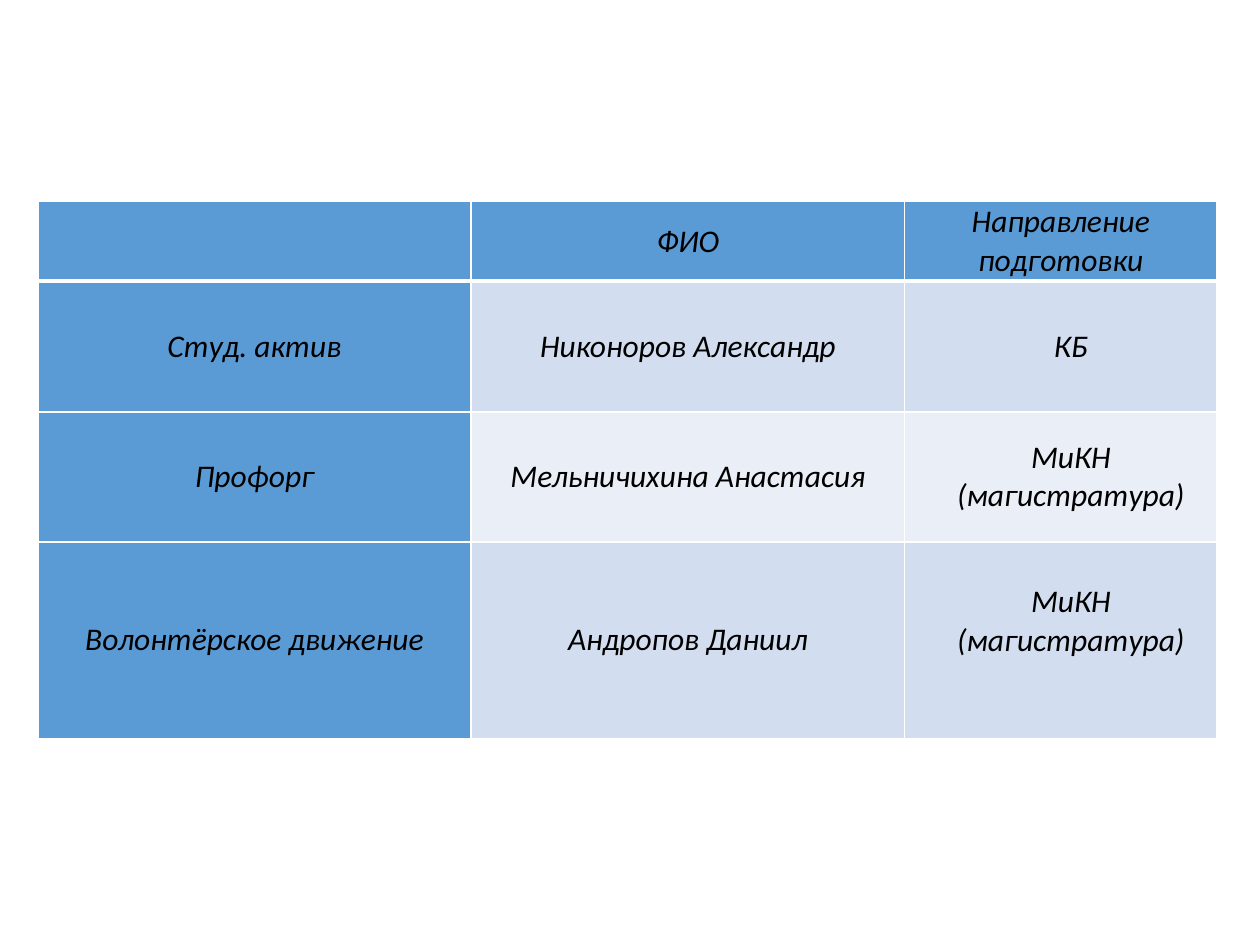
from lxml import etree
from pptx import Presentation
from pptx.dml.color import RGBColor
from pptx.enum.text import MSO_ANCHOR, PP_ALIGN
from pptx.oxml.ns import qn
from pptx.util import Inches, Pt

MIDDLE = MSO_ANCHOR.MIDDLE
CENTER = PP_ALIGN.CENTER

# Content
ROWS = [
    ("", "ФИО", "Направление подготовки"),
    ("Студ. актив", "Никоноров Александр", "КБ"),
    ("Профорг", "Мельничихина Анастасия", "МиКН (магистратура)"),
    ("Волонтёрское движение", "Андропов Даниил", "МиКН (магистратура)"),
]

# Format
COLORS = {"header": "5B9BD5", "odd": "D2DEEF", "even": "EAEFF7",
          "line": "FFFFFF", "text": "000000"}
LEFT, TOP = 0.3, 1.6
COLUMN_WIDTHS = [3.44, 3.44, 2.48]
ROW_HEIGHTS = [0.62, 1.04, 1.03, 1.56]
CELL_MARGIN = 0.01
LAST_CELL_BOTTOM = 0.31
DIRECTION_INDENT = 0.16
FONT = {"name": "Calibri", "size": Pt(18), "italic": True, "bold": False}


def add_border(cell, side, width):
    properties = cell._tc.get_or_add_tcPr()
    line = etree.SubElement(properties, qn(f"a:ln{side}"), w=str(Pt(width)))
    fill = etree.SubElement(line, qn("a:solidFill"))
    etree.SubElement(fill, qn("a:srgbClr"), val=COLORS["line"])


def fill_name(row, column):
    if row == 0 or column == 0:
        return "header"
    return "odd" if row % 2 else "even"


def format_cell(cell, row, column, text):
    # Borders go before the fill; the line under the header is thicker
    widths = {"L": 1, "R": 1, "T": 3 if row == 1 else 1, "B": 3 if row == 0 else 1}
    for side, width in widths.items():
        add_border(cell, side, width)
    cell.fill.solid()
    cell.fill.fore_color.rgb = RGBColor.from_string(COLORS[fill_name(row, column)])

    cell.vertical_anchor = MIDDLE
    for side in ("left", "right", "top", "bottom"):
        setattr(cell, f"margin_{side}", Inches(CELL_MARGIN))

    cell.text = text
    paragraph = cell.text_frame.paragraphs[0]
    paragraph.alignment = CENTER
    if row > 0 and column == 2:
        paragraph._p.get_or_add_pPr().set("marL", str(Inches(DIRECTION_INDENT)))
    for run in paragraph.runs:
        for name, value in FONT.items():
            setattr(run.font, name, value)
        run.font.color.rgb = RGBColor.from_string(COLORS["text"])


presentation = Presentation()
presentation.slide_width, presentation.slide_height = Inches(10), Inches(7.5)
slide = presentation.slides.add_slide(presentation.slide_layouts[6])

# Table grid
table = slide.shapes.add_table(
    len(ROWS), len(COLUMN_WIDTHS), Inches(LEFT), Inches(TOP),
    Inches(sum(COLUMN_WIDTHS)), Inches(sum(ROW_HEIGHTS))).table
table.first_row = table.horz_banding = False
for column, width in zip(table.columns, COLUMN_WIDTHS):
    column.width = Inches(width)
for row, height in zip(table.rows, ROW_HEIGHTS):
    row.height = Inches(height)

# Table cells
for row_index, texts in enumerate(ROWS):
    for column_index, text in enumerate(texts):
        format_cell(table.cell(row_index, column_index), row_index, column_index, text)

# The last direction sits above the middle of its cell
table.cell(len(ROWS) - 1, 2).margin_bottom = Inches(LAST_CELL_BOTTOM)

presentation.save("out.pptx")
